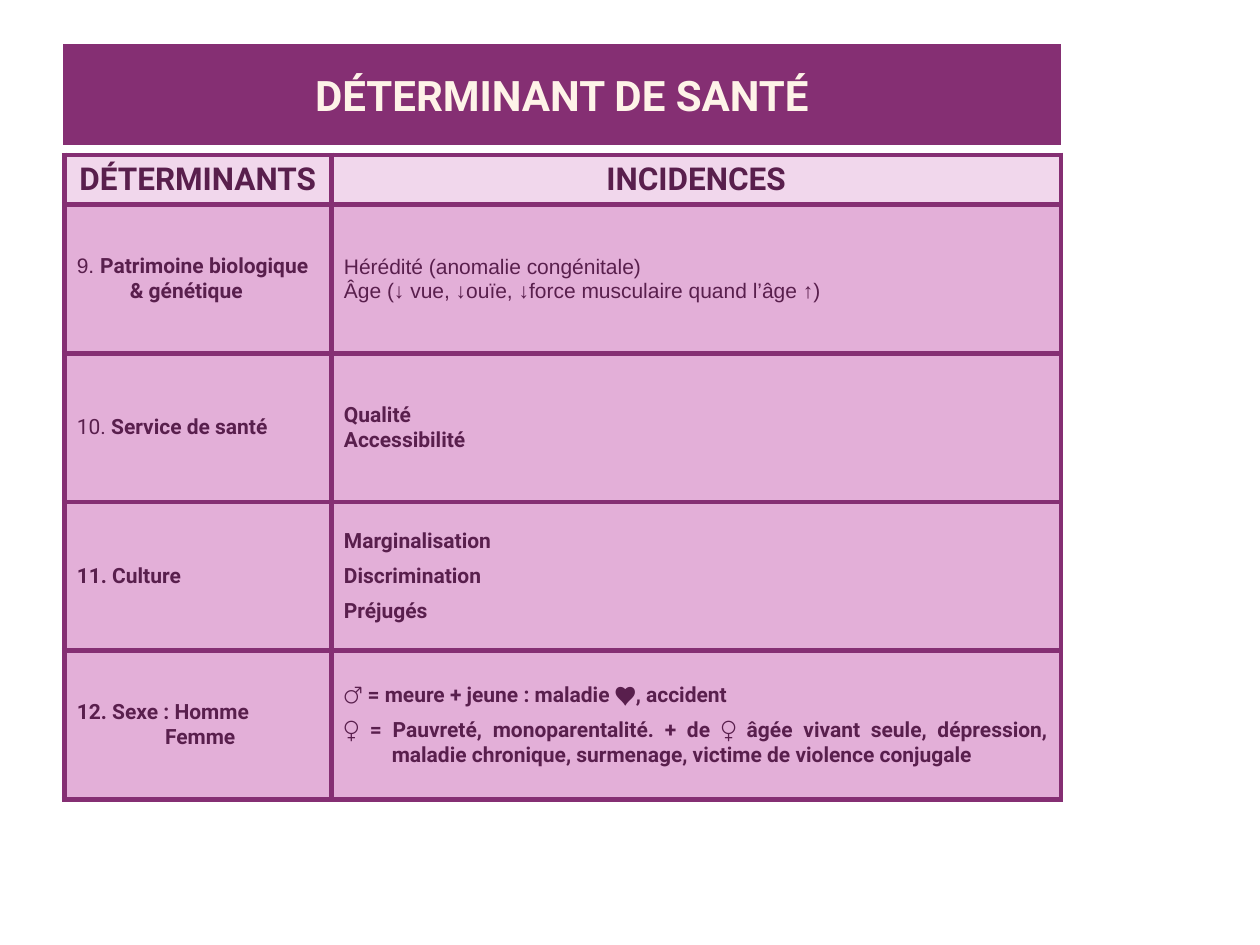
"""Builds the slide on health determinants: a title band above a two-column table."""
from lxml.etree import SubElement
from pptx import Presentation
from pptx.dml.color import RGBColor
from pptx.enum.shapes import MSO_SHAPE as Shape
from pptx.enum.text import MSO_ANCHOR as Anchor, PP_ALIGN as Align
from pptx.oxml.ns import qn
from pptx.util import Inches, Pt

PURPLE, DARK, CREAM = "852F73", "591F4D", "FEF3E8"
HEADER_FILL, BODY_FILL = "F1D7EC", "E3AFD8"


def color(value):
    return RGBColor.from_string(value)


def write(frame, paragraphs, size=12, ink=DARK, align=Align.LEFT, spacing=0, hanging=0):
    for index, (left, runs) in enumerate(paragraphs):
        paragraph = frame.paragraphs[0] if index == 0 else frame.add_paragraph()
        paragraph.alignment = align
        paragraph.space_before = Pt(spacing if index else 0)
        paragraph.space_after = Pt(spacing)
        properties = paragraph._p.get_or_add_pPr()
        properties.set("marL", str(Inches(left + hanging)))
        properties.set("indent", str(Inches(-hanging)))
        for text, font, bold in runs:
            run = paragraph.add_run()
            run.text = text
            run.font.name, run.font.bold, run.font.size = font, bold, Pt(size)
            run.font.color.rgb = color(ink)


def bold(text, left=0):
    return left, [(text, "Roboto", True)]


def plain(text):
    return 0, [(text, "Arial", False)]


presentation = Presentation()
presentation.slide_width, presentation.slide_height = Inches(10), Inches(7.5)
slide = presentation.slides.add_slide(presentation.slide_layouts[6])

band = slide.shapes.add_shape(Shape.RECTANGLE, Inches(0.5), Inches(0.35), Inches(7.92), Inches(0.8))
band.shadow.inherit = False
band.fill.solid()
band.fill.fore_color.rgb = color(PURPLE)
band.line.fill.background()
band.text_frame.vertical_anchor = Anchor.MIDDLE
band.text_frame.word_wrap = True
write(band.text_frame, [bold("DÉTERMINANT DE SANTÉ")], size=24, ink=CREAM, align=Align.CENTER)

header = {"size": 18, "align": Align.CENTER}
spaced = {"align": Align.JUSTIFY, "spacing": 3, "hanging": 0.38}
rows = [
    [([bold("DÉTERMINANTS")], header), ([bold("INCIDENCES")], header)],
    [
        ([(0, [("9. ", "Arial", False), ("Patrimoine biologique", "Roboto", True)]),
          bold("& génétique", left=0.42)], {}),
        ([plain("Hérédité (anomalie congénitale)"),
          plain("Âge (↓ vue, ↓ouïe, ↓force musculaire quand l’âge ↑)")], {}),
    ],
    [
        ([(0, [("10. ", "Roboto", False), ("Service de santé", "Roboto", True)])], {}),
        ([bold("Qualité"), bold("Accessibilité")], {}),
    ],
    [
        ([bold("11. Culture")], {}),
        ([bold("Marginalisation"), bold("Discrimination"), bold("Préjugés")], spaced),
    ],
    [
        ([bold("12. Sexe : Homme"), bold("Femme", left=0.7)], {}),
        ([bold("♂ = meure + jeune : maladie ♥, accident"),
          bold("♀ = Pauvreté, monoparentalité. + de ♀ âgée vivant seule, dépression, "
               "maladie chronique, surmenage, victime de violence conjugale")], spaced),
    ],
]

table = slide.shapes.add_table(
    len(rows), 2, Inches(0.51), Inches(1.23), Inches(7.91), Inches(5.11)).table
table.first_row = table.horz_banding = False
for column, width in zip(table.columns, (2.12, 5.79)):
    column.width = Inches(width)

for row_index, row in enumerate(rows):
    table.rows[row_index].height = Inches(1.18 if row_index else 0.39)
    for column_index, (paragraphs, style) in enumerate(row):
        cell = table.cell(row_index, column_index)
        cell.vertical_anchor = Anchor.MIDDLE if row_index else Anchor.TOP
        for side in ("a:lnL", "a:lnR", "a:lnT", "a:lnB"):
            border = SubElement(cell._tc.get_or_add_tcPr(), qn(side), w=str(Pt(3)))
            SubElement(SubElement(border, qn("a:solidFill")), qn("a:srgbClr"), val=PURPLE)
        cell.fill.solid()
        cell.fill.fore_color.rgb = color(BODY_FILL if row_index else HEADER_FILL)
        write(cell.text_frame, paragraphs, **style)

presentation.save("out.pptx")
